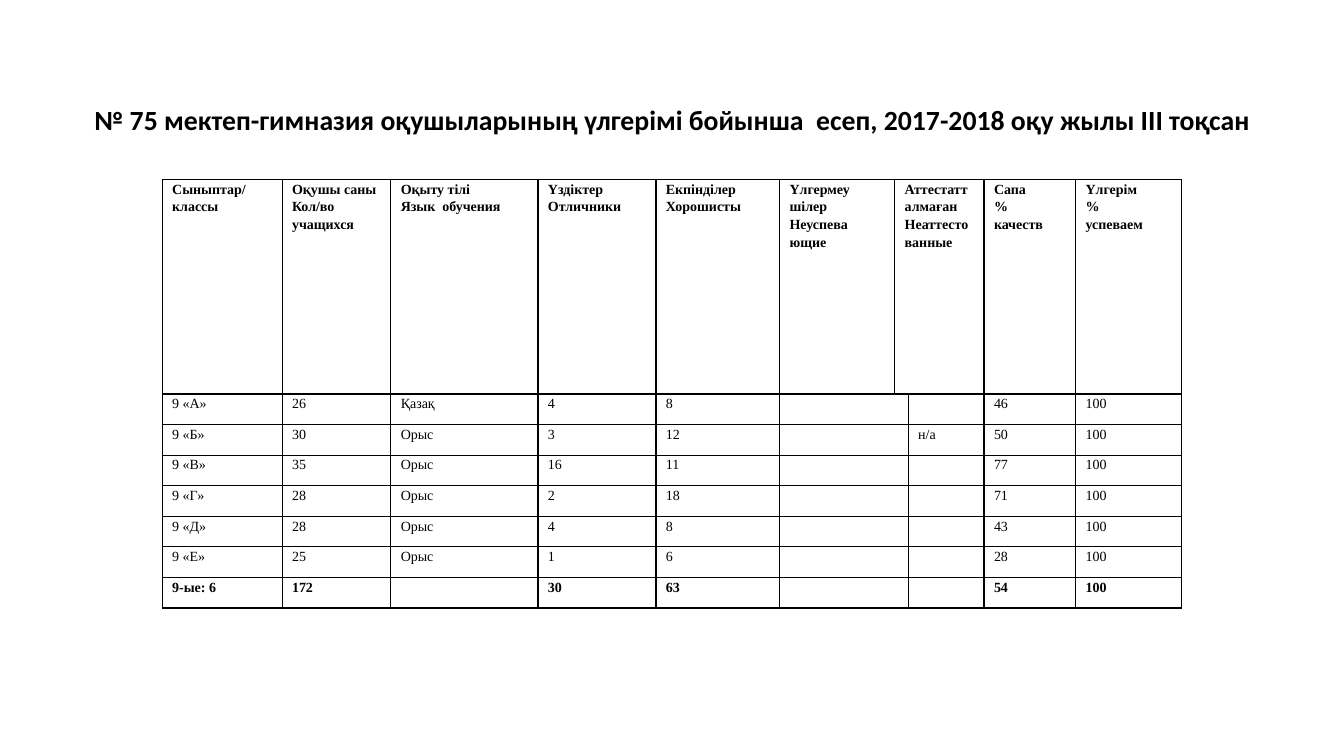
from lxml.etree import SubElement
from pptx import Presentation
from pptx.dml.color import RGBColor
from pptx.enum.text import MSO_ANCHOR, PP_ALIGN
from pptx.oxml.ns import qn
from pptx.util import Cm, Pt

# Content
TITLE = "№ 75 мектеп-гимназия оқушыларының үлгерімі бойынша  есеп, 2017-2018 оқу жылы ІІІ тоқсан"
HEADS = [
    "Сыныптар/\nклассы",
    "Оқушы саны Кол/во учащихся",
    "Оқыту тілі\nЯзык  обучения",
    "Үздіктер\nОтличники",
    "Екпінділер\nХорошисты",
    "Үлгермеу\nшілер\nНеуспева\nющие",
    "Аттестатталмаған\nНеаттестованные",
    "Сапа\n%\nкачеств",
    "Үлгерім\n%\nуспеваем",
]
ROWS = [
    ("9 «А»", "26", "Қазақ", "4", "8", "", "", "46", "100"),
    ("9 «Б»", "30", "Орыс", "3", "12", "", "н/а", "50", "100"),
    ("9 «В»", "35", "Орыс", "16", "11", "", "", "77", "100"),
    ("9 «Г»", "28", "Орыс", "2", "18", "", "", "71", "100"),
    ("9 «Д»", "28", "Орыс", "4", "8", "", "", "43", "100"),
    ("9 «Е»", "25", "Орыс", "1", "6", "", "", "28", "100"),
    ("9-ые: 6", "172", "", "30", "63", "", "", "54", "100"),
]

# Layout in cm: the narrow seventh column joins a different neighbour in the head and the body
WIDTHS = [3.02, 2.74, 3.71, 2.97, 3.12, 2.9, 0.34, 1.91, 2.31, 2.67]
HEAD_COLS = [0, 1, 2, 3, 4, 5, 6, 8, 9]
BODY_COLS = [0, 1, 2, 3, 4, 5, 7, 8, 9]
HEAD_H, ROW_H = 5.41, 0.77
BLACK = RGBColor(0, 0, 0)
WHITE = RGBColor(255, 255, 255)


def write(frame, text, font="Times New Roman", size=10, bold=False,
          align=PP_ALIGN.LEFT, space=1.15):
    frame.word_wrap = True
    for i, line in enumerate(text.split("\n")):
        para = frame.paragraphs[0] if i == 0 else frame.add_paragraph()
        para.alignment, para.line_spacing = align, space
        if not line:
            # An empty line keeps the text size, so its row does not grow
            SubElement(para._p, qn("a:endParaRPr"), sz=str(size * 100))
            continue
        run = para.add_run()
        run.text = line
        run.font.name, run.font.size = font, Pt(size)
        run.font.bold, run.font.color.rgb = bold, BLACK


def frame_cell(cell):
    props = cell._tc.get_or_add_tcPr()
    for side in ("lnL", "lnR", "lnT", "lnB"):
        edge = SubElement(props, qn(f"a:{side}"), w=str(Pt(1)))
        fill = SubElement(edge, qn("a:solidFill"))
        SubElement(fill, qn("a:srgbClr"), val=str(BLACK))
    cell.fill.solid()
    cell.fill.fore_color.rgb = WHITE
    cell.margin_left = cell.margin_right = Cm(0.25)
    cell.margin_top = cell.margin_bottom = 0


def main():
    deck = Presentation()
    deck.slide_width, deck.slide_height = Cm(33.87), Cm(19.05)
    slide = deck.slides.add_slide(deck.slide_layouts[6])

    # Title
    box = slide.shapes.add_textbox(Cm(1.7), Cm(1.12), Cm(30.48), Cm(2.82))
    frame = box.text_frame
    frame.vertical_anchor = MSO_ANCHOR.BOTTOM
    frame.margin_bottom = Cm(0.51)
    write(frame, TITLE, font="Calibri", size=19.8, bold=True,
          align=PP_ALIGN.CENTER, space=1.0)

    # Table grid
    count = len(ROWS) + 1
    table = slide.shapes.add_table(
        count, len(WIDTHS), Cm(4.09), Cm(4.52),
        Cm(sum(WIDTHS)), Cm(HEAD_H + ROW_H * len(ROWS))).table
    table.first_row = table.horz_banding = False
    for col, width in zip(table.columns, WIDTHS):
        col.width = Cm(width)
    for r, row in enumerate(table.rows):
        row.height = Cm(ROW_H if r else HEAD_H)
        for cell in row.cells:
            frame_cell(cell)
        first = 5 if r else 6
        table.cell(r, first).merge(table.cell(r, first + 1))

    # Table text
    for r, texts in enumerate([HEADS, *ROWS]):
        for c, text in zip(BODY_COLS if r else HEAD_COLS, texts):
            write(table.cell(r, c).text_frame, text, bold=r in (0, count - 1))

    deck.save("out.pptx")


if __name__ == "__main__":
    main()
